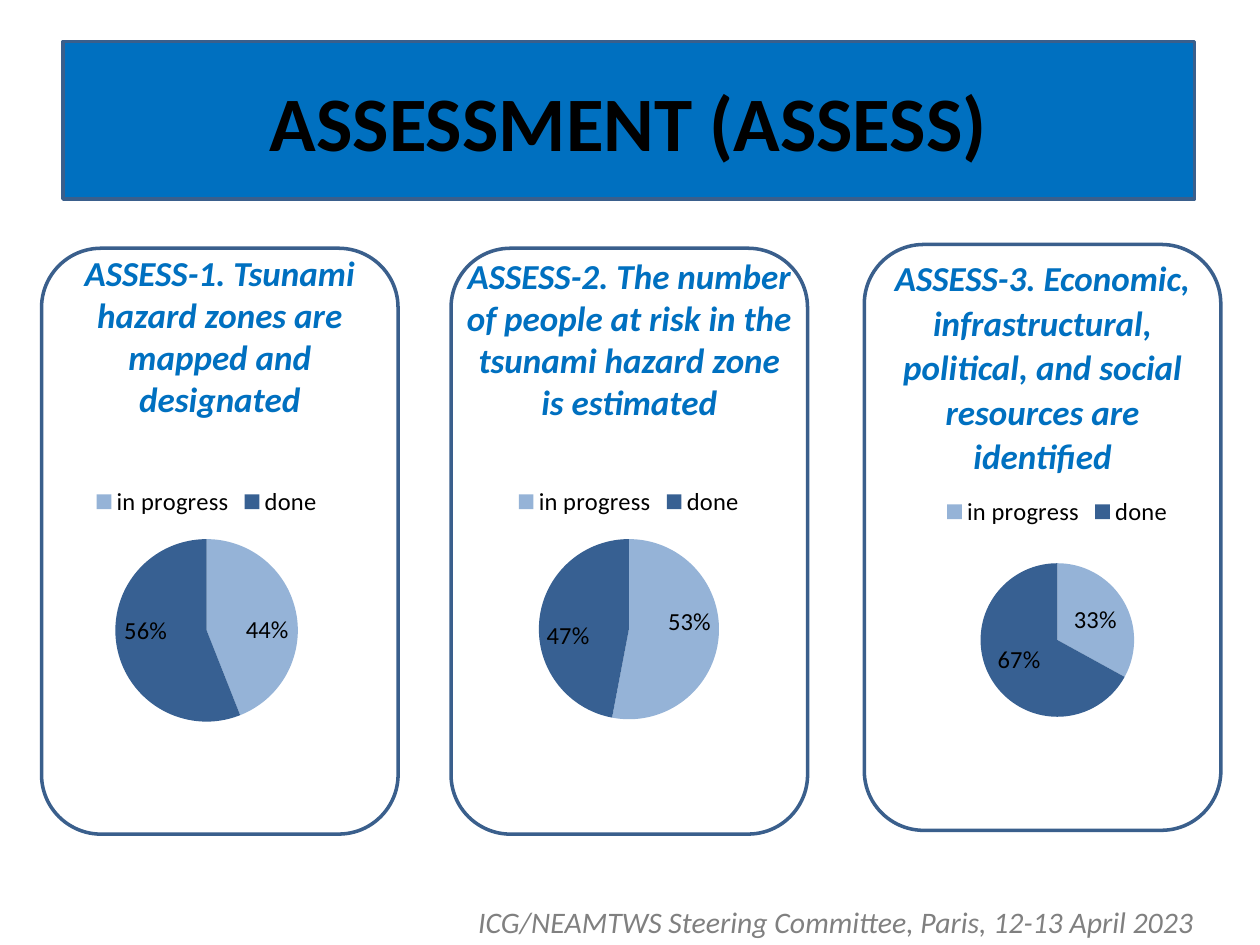
from pptx import Presentation
from pptx.chart.data import CategoryChartData
from pptx.dml.color import RGBColor
from pptx.enum.chart import XL_CHART_TYPE, XL_LABEL_POSITION, XL_LEGEND_POSITION
from pptx.enum.shapes import MSO_SHAPE
from pptx.enum.text import MSO_ANCHOR, PP_ALIGN
from pptx.oxml import parse_xml
from pptx.oxml.ns import nsdecls, qn
from pptx.util import Inches, Pt

PIE = XL_CHART_TYPE.PIE
INSIDE_END = XL_LABEL_POSITION.INSIDE_END
LEGEND_TOP = XL_LEGEND_POSITION.TOP
RECT, ROUND_RECT = MSO_SHAPE.RECTANGLE, MSO_SHAPE.ROUNDED_RECTANGLE
MIDDLE, CENTER = MSO_ANCHOR.MIDDLE, PP_ALIGN.CENTER

BLUE = RGBColor(0x00, 0x70, 0xC0)
OUTLINE = RGBColor(0x3A, 0x5F, 0x8C)
IN_PROGRESS = RGBColor(0x95, 0xB3, 0xD7)
DONE = RGBColor(0x37, 0x60, 0x92)
GRAY = RGBColor(0x80, 0x80, 0x80)
BLACK = RGBColor(0, 0, 0)
FONT = "Calibri"

CARD_W, CARD_H = 2.83, 4.65
CHART_W, CHART_H = 3.5, 2.1

# heading, heading top, line spacing, card left, card top,
# chart left, chart top, pie offset, pie diameter, percentages
GOALS = [
    ("ASSESS-1. Tsunami hazard zones are mapped and designated",
     1.95, 1, 0.33, 1.97, -0.11, 3.75, 0.53, 1.45, (44, 56)),
    ("ASSESS-2. The number of people at risk in the tsunami hazard zone "
     "is estimated",
     1.97, 1, 3.58, 1.97, 3.24, 3.75, 0.53, 1.43, (53, 47)),
    ("ASSESS-3. Economic, infrastructural, political, and social resources "
     "are identified",
     1.97, 1.06, 6.86, 1.94, 6.64, 3.83, 0.64, 1.22, (33, 67)),
]


def style_font(font, size, color, bold=False, italic=False):
    font.name = FONT
    font.size = Pt(size)
    font.color.rgb = color
    font.bold = bold
    font.italic = italic


def write(tf, text, size, color, spacing=1, **style):
    tf.word_wrap = True
    p = tf.paragraphs[0]
    p.alignment = CENTER
    p.line_spacing = spacing
    r = p.add_run()
    r.text = text
    style_font(r.font, size, color, **style)


def add_text(s, box, *args, **style):
    sp = s.shapes.add_textbox(*map(Inches, box))
    write(sp.text_frame, *args, **style)


def add_box(s, kind, box, fill=None):
    sp = s.shapes.add_shape(kind, *map(Inches, box))
    sp.shadow.inherit = False
    if fill is None:
        sp.fill.background()
    else:
        sp.fill.solid()
        sp.fill.fore_color.rgb = fill
    sp.line.color.rgb = OUTLINE
    sp.line.width = Pt(2)
    return sp


def place_pie(chart, top, diameter):
    """Fix the pie's size and centre it across the chart."""
    area = chart.element.find(".//" + qn("c:plotArea"))
    for old in area.findall(qn("c:layout")):
        area.remove(old)
    w, h = diameter / CHART_W, diameter / CHART_H
    area.insert(0, parse_xml(
        f'<c:layout {nsdecls("c")}><c:manualLayout>'
        '<c:layoutTarget val="inner"/>'
        '<c:xMode val="edge"/><c:yMode val="edge"/>'
        f'<c:x val="{(1 - w) / 2:.3f}"/><c:y val="{top / CHART_H:.3f}"/>'
        f'<c:w val="{w:.3f}"/><c:h val="{h:.3f}"/>'
        '</c:manualLayout></c:layout>'))


def add_pie(s, left, top, pie_top, diameter, values):
    data = CategoryChartData()
    data.categories = ["in progress", "done"]
    data.add_series("Series 1", values)
    box = map(Inches, (left, top, CHART_W, CHART_H))
    chart = s.shapes.add_chart(PIE, *box, data).chart
    style_font(chart.font, 10, BLACK)
    chart.has_title = False
    chart.has_legend = True
    chart.legend.position = LEGEND_TOP
    chart.legend.include_in_layout = False
    style_font(chart.legend.font, 14, BLACK)

    plot = chart.plots[0]
    plot.vary_by_categories = True
    for i, color in enumerate((IN_PROGRESS, DONE)):
        fill = plot.series[0].points[i].format.fill
        fill.solid()
        fill.fore_color.rgb = color
    plot.has_data_labels = True
    labels = plot.data_labels
    labels.show_percentage = True
    labels.show_value = False
    labels.number_format = "0%"
    labels.number_format_is_linked = False
    labels.position = INSIDE_END
    style_font(labels.font, 14, BLACK)
    place_pie(chart, pie_top, diameter)


def add_goal(s, heading, text_top, spacing, left, top, *pie):
    add_box(s, ROUND_RECT, (left, top, CARD_W, CARD_H))
    add_text(s, (left, text_top, CARD_W, 1.8), heading, 20, BLUE, spacing,
             bold=True, italic=True)
    add_pie(s, *pie)


def main():
    prs = Presentation()
    prs.slide_width, prs.slide_height = Inches(10), Inches(7.5)
    s = prs.slides.add_slide(prs.slide_layouts[6])
    add_text(s, (3.41, 7.12, 6.45, 0.37),
             "ICG/NEAMTWS Steering Committee, Paris, 12-13 April 2023",
             17, GRAY, italic=True)
    title = add_box(s, RECT, (0.5, 0.33, 8.98, 1.25), BLUE)
    title.text_frame.vertical_anchor = MIDDLE
    write(title.text_frame, "ASSESSMENT (ASSESS)", 44, BLACK, bold=True)
    for goal in GOALS:
        add_goal(s, *goal)
    prs.save("out.pptx")


if __name__ == "__main__":
    main()
